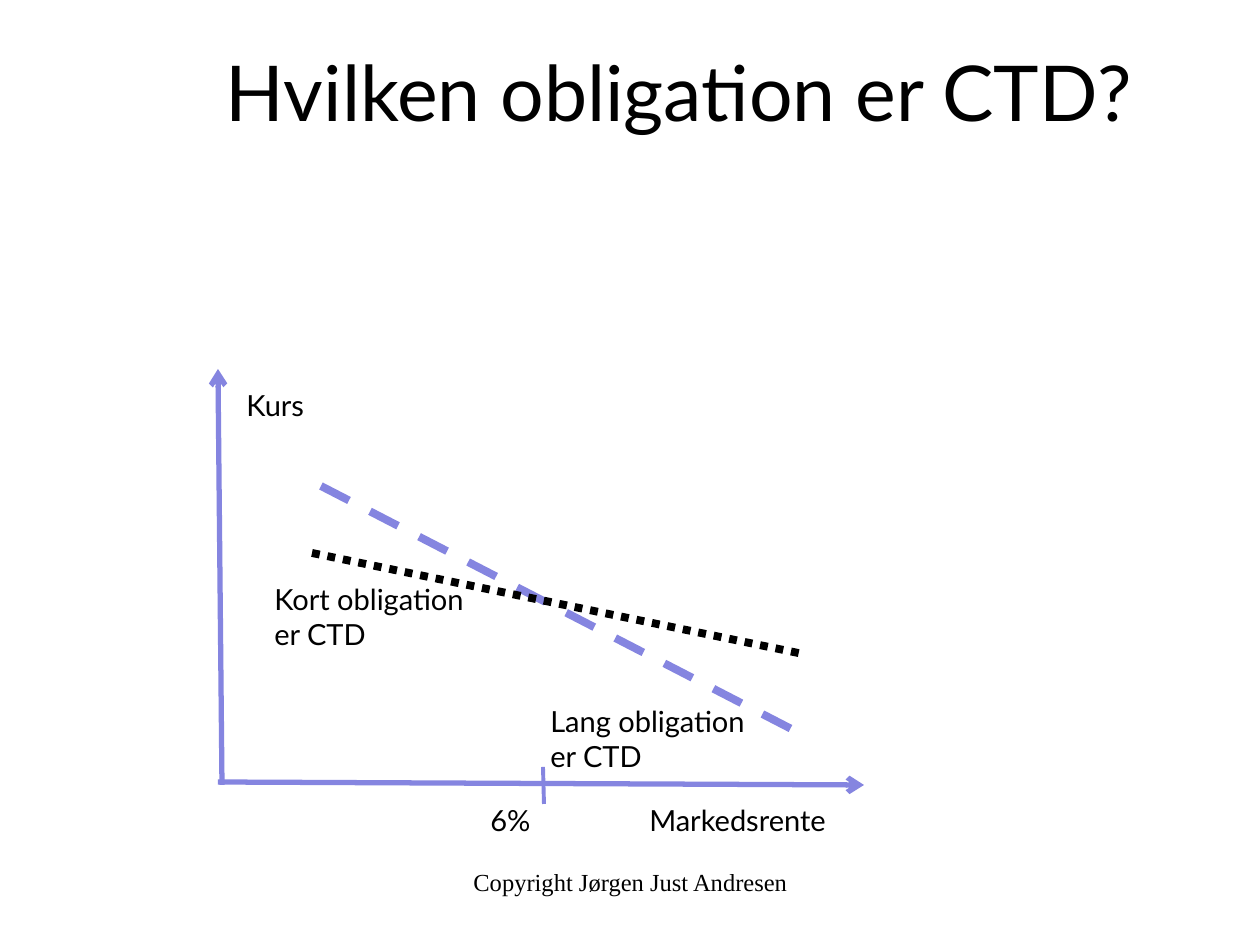
from lxml.etree import SubElement
from pptx import Presentation
from pptx.dml.color import RGBColor
from pptx.enum.dml import MSO_LINE_DASH_STYLE as Dash
from pptx.enum.shapes import MSO_CONNECTOR
from pptx.enum.text import MSO_ANCHOR, PP_ALIGN
from pptx.oxml.ns import qn
from pptx.util import Pt

EMU_PER_PX = 914400 / 126
COLORS = {"ink": "000000", "violet": "8585E0"}


def px(length):
    return round(length * EMU_PER_PX)


def set_font(paragraph, size, name="Lato"):
    paragraph.font.name = name
    paragraph.font.size = Pt(size)
    paragraph.font.color.rgb = RGBColor.from_string(COLORS["ink"])


def add_label(slide, text, box, size=16.6, font="Lato", align=PP_ALIGN.LEFT, wrap=False):
    label = slide.shapes.add_textbox(*map(px, box)).text_frame
    label.word_wrap = wrap
    label.text = text
    for paragraph in label.paragraphs:
        paragraph.alignment = align
        set_font(paragraph, size, font)


def add_line(slide, start, end, color, width, dash=None, arrow=False):
    line = slide.shapes.add_connector(MSO_CONNECTOR.STRAIGHT, *map(px, start + end))
    line.line.color.rgb = RGBColor.from_string(COLORS[color])
    line.line.width = Pt(width)
    if dash:
        line.line.dash_style = dash
    properties = line._element.spPr
    if arrow:
        SubElement(properties.find(qn("a:ln")), qn("a:tailEnd"), type="arrow")
    SubElement(properties, qn("a:effectLst"))


def place_title(slide, box):
    title = slide.shapes.title
    title.left, title.top, title.width, title.height = map(px, box)
    frame = title.text_frame
    frame.text = "Hvilken obligation er CTD?"
    frame.vertical_anchor = MSO_ANCHOR.MIDDLE
    frame.paragraphs[0].alignment = PP_ALIGN.CENTER
    set_font(frame.paragraphs[0], 44)


def draw_price_diagram(slide, box):
    """Bond prices against the market rate, crossing at 6%."""
    left, top, width, height = box

    def at(x, y):
        return left + x, top + y

    def label(text, x, y, label_width, label_height=48):
        add_label(slide, text, (*at(x, y), label_width, label_height))

    add_line(slide, at(0, height - 3), at(width, height), "violet", 3, arrow=True)
    add_line(slide, at(4, height), at(0, 0), "violet", 3, arrow=True)
    label("Kurs", 16, 12, 89)
    label("6%", 260, height + 11, 65)
    label("Markedsrente", 419, height + 11, 202)

    long_bond = at(103, 117), at(585, 366)
    short_bond = at(94, 184), at(585, 285)
    add_line(slide, *long_bond, "violet", 4.5, Dash.DASH)
    add_line(slide, *short_bond, "ink", 4.5, Dash.ROUND_DOT)
    add_line(slide, at(325, height - 18), at(326, height + 19), "violet", 2.25)
    label("Lang obligation\ner CTD", 320, 328, 236, 83)
    label("Kort obligation\ner CTD", 44, 206, 229, 83)


def place_footer(slide, box):
    add_label(slide, "Copyright Jørgen Just Andresen", box, 14,
              "Times New Roman", PP_ALIGN.CENTER, wrap=True)


def main():
    presentation = Presentation()
    presentation.slide_width, presentation.slide_height = px(1260), px(945)
    slide = presentation.slides.add_slide(presentation.slide_layouts[5])
    place_title(slide, (139, 62, 1081, 58))
    draw_price_diagram(slide, (218, 369, 646, 416))
    place_footer(slide, (431, 861, 399, 63))
    presentation.save("out.pptx")


if __name__ == "__main__":
    main()
